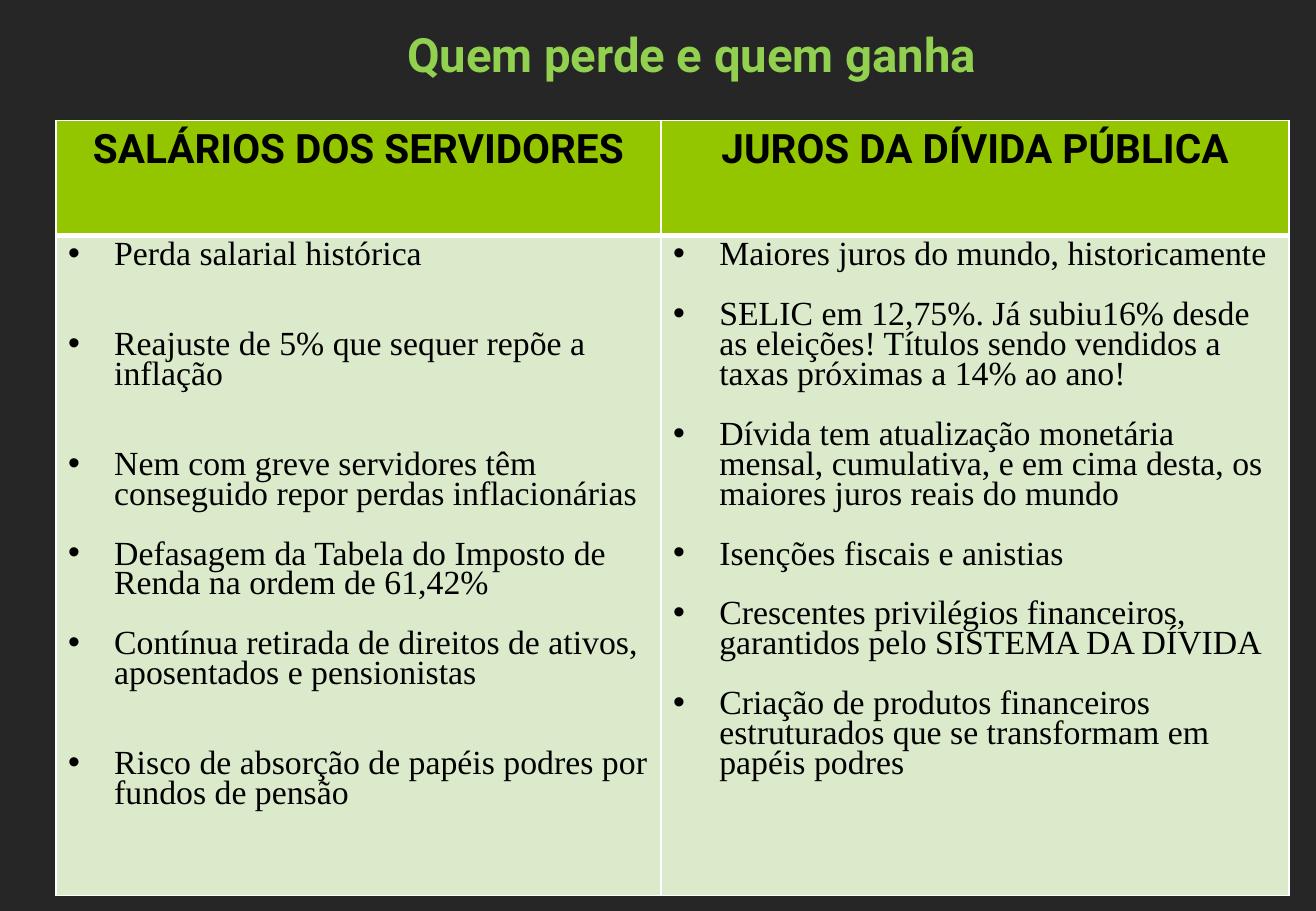
from lxml import etree
from pptx import Presentation
from pptx import util as u
from pptx.dml.color import RGBColor
from pptx.enum import text
from pptx.oxml.ns import qn

BACKDROP = RGBColor(0x26, 0x26, 0x26)
TITLE_GREEN = RGBColor(0x92, 0xD0, 0x50)
HEADER_GREEN = RGBColor(0x94, 0xC6, 0x00)
BODY_GREEN = RGBColor(0xDC, 0xEA, 0xCC)
BLACK = RGBColor(0, 0, 0)
WHITE = RGBColor(0xFF, 0xFF, 0xFF)

HEADING = "Quem perde e quem ganha"
COMPARISON = [
    ("SALÁRIOS DOS SERVIDORES", [
        ("Perda salarial histórica", 2),
        ("Reajuste de 5% que sequer repõe a inflação", 2),
        ("Nem com greve servidores têm conseguido repor perdas inflacionárias", 1),
        ("Defasagem da Tabela do Imposto de Renda na ordem de 61,42%", 1),
        ("Contínua retirada de direitos de ativos, aposentados e pensionistas", 2),
        ("Risco de absorção de papéis podres por fundos de pensão", 0),
    ]),
    ("JUROS DA DÍVIDA PÚBLICA", [
        ("Maiores juros do mundo, historicamente", 1),
        ("SELIC em 12,75%. Já subiu16% desde as eleições! "
         "Títulos sendo vendidos a taxas próximas a 14% ao ano!", 1),
        ("Dívida tem atualização monetária mensal, cumulativa, "
         "e em cima desta, os maiores juros reais do mundo", 1),
        ("Isenções fiscais e anistias", 1),
        ("Crescentes privilégios financeiros, garantidos pelo SISTEMA DA DÍVIDA", 1),
        ("Criação de produtos financeiros estruturados que se transformam "
         "em papéis podres", 0),
    ]),
]

SLIDE_WIDTH, SLIDE_HEIGHT = 10.83, 7.5
TITLE_BOX = (0.77, 0.16, 9.84, 1.89)
TABLE_CORNER = (0.46, 0.99)
COLUMN_WIDTHS = (4.98, 5.17)
ROW_HEIGHTS = (0.95, 5.43)
LINE_GAP = 17.75
HANGING = u.Inches(0.38)

TITLE_FONT = {"name": "Roboto", "size": u.Pt(28), "bold": True}
HEADER_FONT = {"name": "Roboto", "size": u.Pt(24), "bold": True}
ITEM_FONT = {"name": "Times New Roman", "size": u.Pt(20), "bold": False}
HEADER_BORDERS = {"lnL": 1, "lnR": 1, "lnT": 1, "lnB": 3}
BODY_BORDERS = {"lnL": 1, "lnR": 1, "lnT": 3, "lnB": 1}


def write(paragraph, words, font, color):
    run = paragraph.add_run()
    run.text = words
    for attribute, value in font.items():
        setattr(run.font, attribute, value)
    run.font.color.rgb = color


def paint(cell, color, borders):
    properties = cell._tc.get_or_add_tcPr()
    for side, points in borders.items():
        edge = etree.SubElement(properties, qn(f"a:{side}"), w=str(u.Pt(points)))
        ink = etree.SubElement(edge, qn("a:solidFill"))
        etree.SubElement(ink, qn("a:srgbClr"), val=str(WHITE))
    cell.fill.solid()
    cell.fill.fore_color.rgb = color


def add_item(paragraph, words, blank_lines):
    paragraph.line_spacing = 0.8
    paragraph.space_after = u.Pt(blank_lines * LINE_GAP)
    properties = paragraph._p.get_or_add_pPr()
    properties.set("marL", str(HANGING))
    properties.set("indent", str(-HANGING))
    etree.SubElement(properties, qn("a:buFont"), typeface="Arial")
    etree.SubElement(properties, qn("a:buChar"), char="•")
    write(paragraph, words, ITEM_FONT, BLACK)


def main():
    deck = Presentation()
    deck.slide_width, deck.slide_height = u.Inches(SLIDE_WIDTH), u.Inches(SLIDE_HEIGHT)
    slide = deck.slides.add_slide(deck.slide_layouts[5])
    slide.background.fill.solid()
    slide.background.fill.fore_color.rgb = BACKDROP

    title = slide.shapes.title
    for side, inches in zip(("left", "top", "width", "height"), TITLE_BOX):
        setattr(title, side, u.Inches(inches))
    title.text_frame.auto_size = text.MSO_AUTO_SIZE.NONE
    title.text_frame.vertical_anchor = text.MSO_ANCHOR.TOP
    heading = title.text_frame.paragraphs[0]
    heading.alignment = text.PP_ALIGN.CENTER
    write(heading, HEADING, TITLE_FONT, TITLE_GREEN)

    extent = (*TABLE_CORNER, sum(COLUMN_WIDTHS), sum(ROW_HEIGHTS))
    table = slide.shapes.add_table(2, len(COMPARISON), *map(u.Inches, extent)).table
    table.horz_banding = False
    for row, height in zip(table.rows, ROW_HEIGHTS):
        row.height = u.Inches(height)

    for column, (label, items) in enumerate(COMPARISON):
        table.columns[column].width = u.Inches(COLUMN_WIDTHS[column])
        header, body = table.cell(0, column), table.cell(1, column)
        paint(header, HEADER_GREEN, HEADER_BORDERS)
        paint(body, BODY_GREEN, BODY_BORDERS)
        caption = header.text_frame.paragraphs[0]
        caption.alignment = text.PP_ALIGN.CENTER
        write(caption, label, HEADER_FONT, BLACK)
        for position, (words, blank_lines) in enumerate(items):
            frame = body.text_frame
            paragraph = frame.add_paragraph() if position else frame.paragraphs[0]
            add_item(paragraph, words, blank_lines)

    deck.save("out.pptx")


if __name__ == "__main__":
    main()
